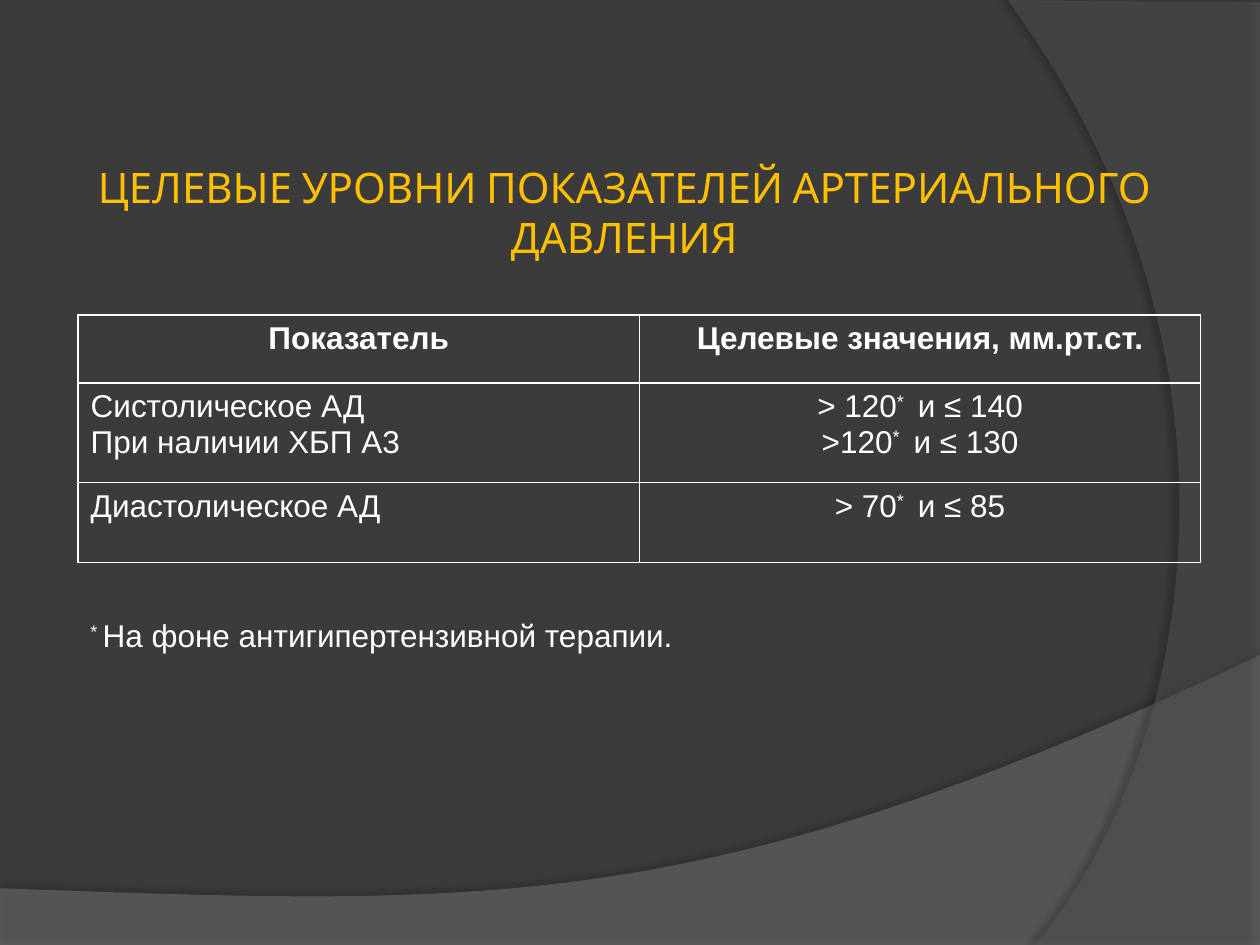
from lxml import etree
from pptx import Presentation
from pptx.dml.color import RGBColor
from pptx.enum.text import MSO_ANCHOR, MSO_AUTO_SIZE, PP_ALIGN
from pptx.oxml.ns import qn
from pptx.util import Pt

CENTER = PP_ALIGN.CENTER
LEFT = PP_ALIGN.LEFT
MIDDLE = MSO_ANCHOR.MIDDLE
FIT_SHAPE = MSO_AUTO_SIZE.SHAPE_TO_FIT_TEXT

WIDTH, HEIGHT = 720, 540
CURVE_STEPS = 60
BORDER_SIDES = ("lnL", "lnR", "lnT", "lnB")
TITLE_FORMAT = {"name": "Cabin", "size": Pt(24), "bold": False}
BODY_FORMAT = {"name": "Arial", "size": Pt(18), "bold": False}
HEADER_FORMAT = {**BODY_FORMAT, "bold": True}

ROWS = [
    [["Показатель"], ["Целевые значения, мм.рт.ст."]],
    [["Систолическое АД", "При наличии ХБП А3"],
     ["> 120^* ^ и ≤ 140", ">120^* ^ и ≤ 130"]],
    [["Диастолическое АД"], ["> 70^* ^ и ≤ 85"]],
]


def color(code):
    return RGBColor.from_string(code)


def add_xml(parent, tag, **attributes):
    values = {key: str(value) for key, value in attributes.items()}
    return etree.SubElement(parent, qn(tag), values)


def place(shape, left, top, width, height):
    frame = {"left": left, "top": top, "width": width, "height": height}
    for key, value in frame.items():
        setattr(shape, key, Pt(value))


def write_lines(text_frame, lines, font_format, font_color, alignment):
    for index, line in enumerate(lines):
        paragraph = text_frame.paragraphs[0] if index == 0 else text_frame.add_paragraph()
        paragraph.alignment = alignment
        for position, part in enumerate(line.split("^")):
            if not part:
                continue
            run = paragraph.add_run()
            run.text = part
            for key, value in font_format.items():
                setattr(run.font, key, value)
            run.font.color.rgb = color(font_color)
            if position % 2:
                run._r.get_or_add_rPr().set("baseline", "30000")


def bezier(start, first, second, end):
    for step in range(1, CURVE_STEPS + 1):
        t = step / CURVE_STEPS
        weights = ((1 - t) ** 3, 3 * t * (1 - t) ** 2, 3 * t * t * (1 - t), t ** 3)
        yield tuple(
            sum(weight * value for weight, value in zip(weights, axis))
            for axis in zip(start, first, second, end)
        )


def add_backdrop(slide, corners, curve, fill, opacity, shadow_opacity, distance, angle):
    points = [(Pt(x), Pt(y)) for x, y in [*corners, *bezier(corners[-1], *curve)]]
    builder = slide.shapes.build_freeform(*points[0])
    builder.add_line_segments(points[1:], close=True)
    backdrop = builder.convert_to_shape()
    backdrop.fill.solid()
    backdrop.fill.fore_color.rgb = color(fill)
    backdrop.line.fill.background()
    backdrop.shadow.inherit = False
    properties = backdrop.element.spPr
    fill_color = properties.find(qn("a:solidFill"))[0]
    add_xml(fill_color, "a:alpha", val=opacity * 1000)
    shadow = add_xml(properties.find(qn("a:effectLst")), "a:outerShdw",
                     blurRad=Pt(4), dist=Pt(distance), dir=angle * 60000,
                     algn="ctr", rotWithShape=0)
    shadow_color = add_xml(shadow, "a:srgbClr", val="000000")
    add_xml(shadow_color, "a:alpha", val=shadow_opacity * 1000)
    slide.shapes.title.element.addprevious(backdrop.element)


def add_title(slide, title_text):
    title = slide.shapes.title
    place(title, 16.56, 61.92, 680.4, 118.08)
    text_frame = title.text_frame
    text_frame.word_wrap = True
    text_frame.vertical_anchor = MIDDLE
    for side in ("left", "right", "top", "bottom"):
        setattr(text_frame, f"margin_{side}", Pt(3.6))
    write_lines(text_frame, [title_text], TITLE_FORMAT, "FFC000", CENTER)


def add_borders(cell):
    properties = cell._tc.get_or_add_tcPr()
    for side in BORDER_SIDES:
        border = add_xml(properties, f"a:{side}", w=Pt(1))
        add_xml(add_xml(border, "a:solidFill"), "a:srgbClr", val="FFFFFF")


def add_pressure_table(slide):
    heights = (38.88, 56.88, 45.72)
    table = slide.shapes.add_table(
        len(ROWS), 2, Pt(44.64), Pt(180), Pt(641.52), Pt(sum(heights))
    ).table
    table.first_row = table.horz_banding = False
    for row_index, (row, height) in enumerate(zip(ROWS, heights)):
        table.rows[row_index].height = Pt(height)
        for column_index, lines in enumerate(row):
            cell = table.cell(row_index, column_index)
            add_borders(cell)
            cell.fill.background()
            is_header = row_index == 0
            write_lines(cell.text_frame, lines,
                        HEADER_FORMAT if is_header else BODY_FORMAT, "FFFFFF",
                        CENTER if is_header or column_index else LEFT)


def add_footnote(slide, footnote):
    text_frame = slide.shapes.add_textbox(
        Pt(44.64), Pt(348.48), Pt(393.84), Pt(28.8)
    ).text_frame
    text_frame.word_wrap = True
    text_frame.auto_size = FIT_SHAPE
    write_lines(text_frame, [footnote], BODY_FORMAT, "FFFFFF", LEFT)


def main():
    presentation = Presentation()
    presentation.slide_width, presentation.slide_height = Pt(WIDTH), Pt(HEIGHT)
    slide = presentation.slides.add_slide(presentation.slide_layouts[5])
    slide.background.fill.solid()
    slide.background.fill.fore_color.rgb = color("3B3B3B")
    add_backdrop(slide, [(0, 507.6), (0, HEIGHT), (WIDTH, HEIGHT), (WIDTH, 374.4)],
                 [(402.48, 524.88), (281.52, 517.68), (0, 507.6)],
                 "7F7F7F", 45, 35, 3.5, 270)
    add_backdrop(slide, [(WIDTH, 1.44), (WIDTH, HEIGHT), (591.12, HEIGHT)],
                 [(673.2, 445.68), (732.96, 216), (576, 0)],
                 "5E5E5E", 40, 45, 4, 180)
    add_title(slide, "ЦЕЛЕВЫЕ УРОВНИ ПОКАЗАТЕЛЕЙ АРТЕРИАЛЬНОГО ДАВЛЕНИЯ")
    add_pressure_table(slide)
    add_footnote(slide, "^* ^На фоне антигипертензивной терапии.")
    presentation.save("out.pptx")


if __name__ == "__main__":
    main()
